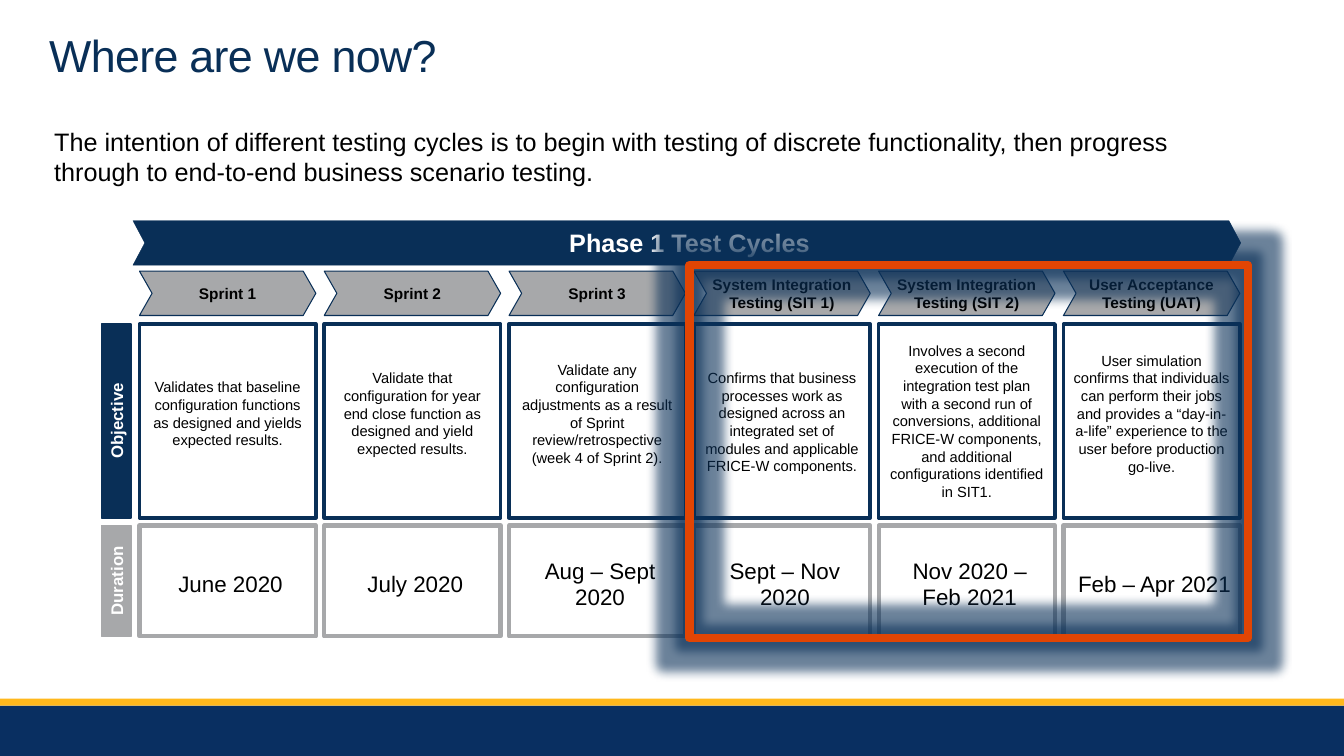
from pptx import Presentation
from pptx import util as u
from pptx.dml.color import RGBColor
from pptx.enum import shapes, text
from pptx.oxml import parse_xml
from pptx.oxml.ns import nsdecls

NAVY = RGBColor(0x09, 0x2F, 0x57)
FOOTER_NAVY = RGBColor(0x09, 0x2F, 0x61)
GOLD = RGBColor(0xFF, 0xB8, 0x1C)
GRAY = RGBColor(0xA7, 0xA8, 0xAA)
ORANGE = RGBColor(0xE1, 0x45, 0x04)
WHITE = RGBColor(0xFF, 0xFF, 0xFF)
BLACK = RGBColor(0, 0, 0)

RECTANGLE = shapes.MSO_SHAPE.RECTANGLE
CHEVRON = shapes.MSO_SHAPE.CHEVRON
CENTER = text.PP_ALIGN.CENTER
LEFT = text.PP_ALIGN.LEFT
MIDDLE = text.MSO_ANCHOR.MIDDLE
TOP = text.MSO_ANCHOR.TOP

COLUMN_LEFT, COLUMN_STEP, COLUMN_WIDTH = 99.6, 132, 126
SIDE_LEFT, SIDE_WIDTH = 72.7, 20.9
BANNER_TOP, CHEVRON_TOP, ARROW_HEIGHT = 157.7, 193.7, 31.7
OBJECTIVE_TOP, OBJECTIVE_HEIGHT = 231.4, 138.6
DURATION_TOP, DURATION_HEIGHT = 375.4, 79.2
DEFAULT_INSETS = (7.2, 3.6, 7.2, 3.6)

CYCLES = [
    (["Sprint 1"],
     "Validates that baseline configuration functions as designed and yields expected results.",
     3.6, "June 2020"),
    (["Sprint 2"],
     "Validate that configuration for year end close function as designed and yield expected results.",
     3.6, "July 2020"),
    (["Sprint 3"],
     "Validate any configuration adjustments as a result of Sprint review/retrospective (week 4 of Sprint 2).",
     3.6, "Aug – Sept 2020"),
    (["System Integration", "Testing (SIT 1)"],
     "Confirms that business processes work as designed across an integrated set of modules "
     "and applicable FRICE-W components.",
     15.6, "Sept – Nov 2020"),
    (["System Integration", "Testing (SIT 2)"],
     "Involves a second execution of the integration test plan with a second run of conversions, "
     "additional FRICE-W components, and additional configurations identified in SIT1.",
     14.4, "Nov 2020 – Feb 2021"),
    (["User Acceptance", "Testing (UAT)"],
     "User simulation confirms that individuals can perform their jobs and provides a "
     "“day-in-a-life” experience to the user before production go-live.",
     3.6, "Feb – Apr 2021"),
]


class SlideBuilder:
    font_name = "Arial"

    def __init__(self, slide):
        self.slide = slide

    def block(self, preset, box, fill=None, line=None, line_width=1, notch=None):
        shape = self.slide.shapes.add_shape(preset, *map(u.Pt, box))
        shape.shadow.inherit = False
        if notch is not None:
            shape.adjustments[0] = notch
        if fill is None:
            shape.fill.background()
        else:
            shape.fill.solid()
            shape.fill.fore_color.rgb = fill
        if line is None:
            shape.line.fill.background()
        else:
            shape.line.color.rgb = line
            shape.line.width = u.Pt(line_width)
        return shape

    def add_text(self, shape, lines, size, color=BLACK, bold=False, align=CENTER,
                 anchor=MIDDLE, insets=DEFAULT_INSETS, wrap=True):
        frame = shape.text_frame
        frame.word_wrap = wrap
        frame.vertical_anchor = anchor
        (frame.margin_left, frame.margin_top,
         frame.margin_right, frame.margin_bottom) = map(u.Pt, insets)
        for index, line in enumerate(lines):
            paragraph = frame.add_paragraph() if index else frame.paragraphs[0]
            paragraph.alignment = align
            run = paragraph.add_run()
            run.text = line
            run.font.name = self.font_name
            run.font.size = u.Pt(size)
            run.font.bold = bold
            run.font.color.rgb = color
        return frame

    def text_box(self, box, content, size, color=BLACK, anchor=MIDDLE):
        shape = self.slide.shapes.add_textbox(*map(u.Pt, box))
        return self.add_text(shape, [content], size, color, align=LEFT, anchor=anchor)

    def title(self, box, content):
        paragraph = self.text_box(box, content, 32, NAVY, TOP).paragraphs[0]
        paragraph.line_spacing = 0.85
        paragraph.runs[0].font._element.set("spc", "-50")

    def side_label(self, top, height, content, color):
        shape = self.block(RECTANGLE, (SIDE_LEFT, top, SIDE_WIDTH, height), color, color)
        self.add_text(shape, [content], 12, WHITE, True)
        shape.element.txBody.bodyPr.set("vert", "vert270")

    def cycle(self, left, name, objective, objective_inset, duration):
        arrow = self.block(CHEVRON, (left, CHEVRON_TOP, COLUMN_WIDTH, ARROW_HEIGHT),
                           GRAY, NAVY, 0.75, 0.285)
        self.add_text(arrow, name, 11, bold=True, insets=(0, 0, 0, 0), wrap=False)
        card = self.block(RECTANGLE, (left, OBJECTIVE_TOP, COLUMN_WIDTH, OBJECTIVE_HEIGHT),
                          WHITE, NAVY, 2.5)
        self.add_text(card, [objective], 10.5, insets=(7.2, objective_inset, 7.2, 14.4))
        period = self.block(RECTANGLE, (left, DURATION_TOP, COLUMN_WIDTH, DURATION_HEIGHT),
                            line=GRAY, line_width=3)
        self.add_text(period, [duration], 16, insets=(9.2, 7.2, 5.2, 3.6))

    def glowing_frame(self, box):
        frame = self.block(RECTANGLE, box, line=ORANGE, line_width=6)
        effects = frame.element.spPr.find("{*}effectLst")
        effects.append(parse_xml(
            f'<a:glow {nsdecls("a")} rad="{u.Pt(14)}"><a:srgbClr val="{NAVY}">'
            '<a:alpha val="60000"/></a:srgbClr></a:glow>'))


def main():
    presentation = Presentation()
    presentation.slide_width = u.Pt(960)
    presentation.slide_height = u.Pt(540)
    slide = presentation.slides.add_slide(presentation.slide_layouts[6])
    builder = SlideBuilder(slide)

    builder.block(RECTANGLE, (0, 504, 960, 36), FOOTER_NAVY)
    builder.block(RECTANGLE, (0, 499, 960, 5), GOLD)
    builder.title((28.1, 22.3, 905.8, 40.3), "Where are we now?")
    builder.text_box((31.7, 73.4, 828, 77),
                     "The intention of different testing cycles is to begin with testing of discrete "
                     "functionality, then progress through to end-to-end business scenario testing.", 18)

    banner = builder.block(CHEVRON, (95, BANNER_TOP, 791.3, ARROW_HEIGHT), NAVY, NAVY, 0.25, 0.266)
    builder.add_text(banner, ["Phase 1 Test Cycles"], 18, WHITE, True, insets=(10.8, 3.6, 7.2, 3.6))
    builder.side_label(OBJECTIVE_TOP, OBJECTIVE_HEIGHT, "Objective", NAVY)
    builder.side_label(DURATION_TOP, DURATION_HEIGHT, "Duration", GRAY)
    for index, cycle in enumerate(CYCLES):
        builder.cycle(COLUMN_LEFT + index * COLUMN_STEP, *cycle)
    builder.glowing_frame((492.5, 189.4, 398.9, 266.4))

    presentation.save("out.pptx")


if __name__ == "__main__":
    main()
